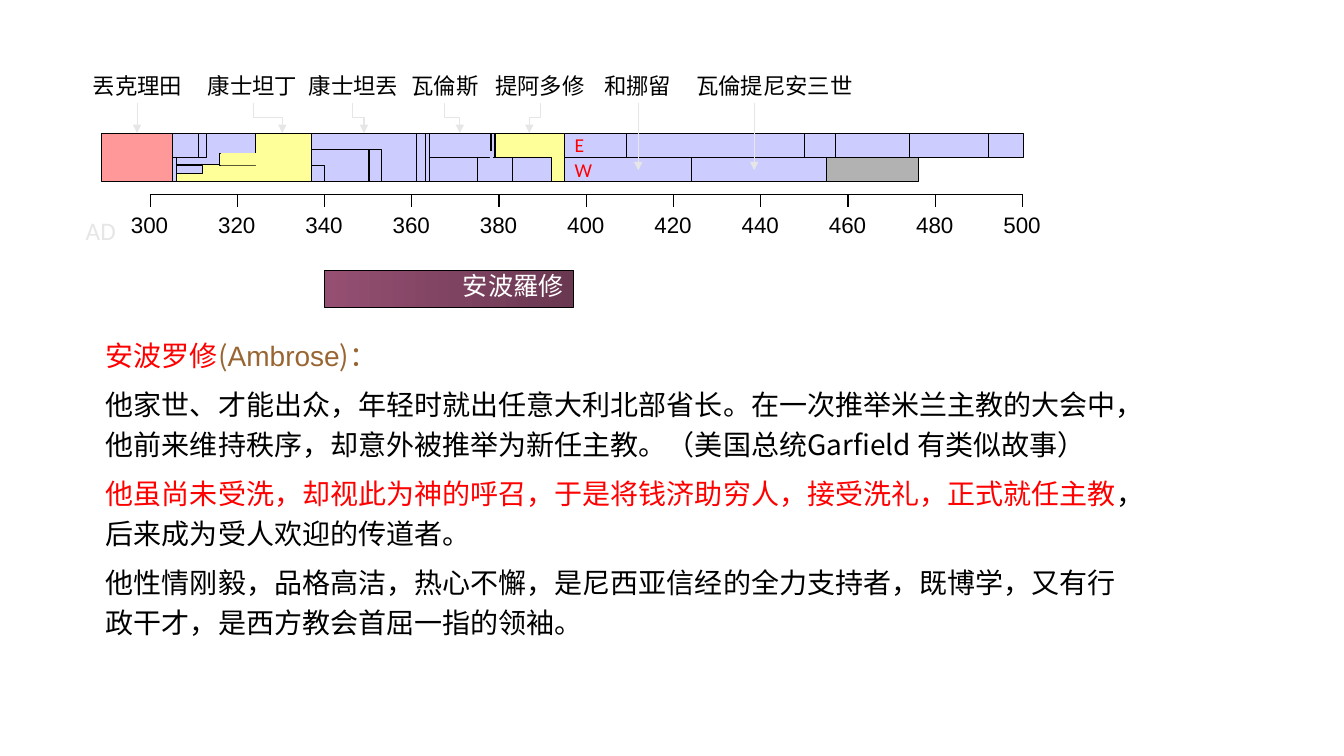
from dataclasses import dataclass

from lxml.etree import SubElement
from pptx import Presentation
from pptx.dml.color import RGBColor as Rgb
from pptx.enum.shapes import MSO_CONNECTOR as Link, MSO_SHAPE as Kind
from pptx.enum.text import MSO_ANCHOR as Anchor, MSO_AUTO_SIZE as Auto, PP_ALIGN as Align
from pptx.oxml.ns import qn
from pptx.util import Emu, Pt


@dataclass(frozen=True)
class Theme:
    black: str = "000000"
    white: str = "FFFFFF"
    red: str = "FF0000"
    brown: str = "996633"
    pale: str = "E7E6E6"
    lilac: str = "CCCCFF"
    pink: str = "FF9999"
    gold: str = "FFFF99"
    gray: str = "B2B2B2"
    plum: str = "954F72"
    sans: str = "Calibri"
    plain: str = "Arial"
    han: str = "Noto Sans CJK SC"
    mark: int = 14
    label: int = 16
    name: int = 18
    body: int = 20
    thin: float = 0.75


T = Theme()
SCALE = 9144
ZERO, YEAR = 149, 4.33
TOP, HALF, FULL = 132, 24, 48
LOW = TOP + HALF

REIGNS = [
    (305, 306, LOW, HALF, T.lilac),
    (289, 305, TOP, FULL, T.pink),
    (337, 361, TOP, FULL, T.lilac),
    (361, 363, TOP, FULL, T.lilac),
    (363, 364, TOP, FULL, T.lilac),
    (395, 424, LOW, HALF, T.lilac, "W"),
    (424, 455, LOW, HALF, T.lilac),
    (455, 476, LOW, HALF, T.gray),
    (306, 337, TOP, FULL, T.gold),
    (306, 312, 164, 8, T.lilac),
    (306, 324, TOP, 31, T.lilac),
    (311, 313, TOP, HALF, T.lilac),
    (305, 311, TOP, HALF, T.lilac),
    (395, 409, TOP, HALF, T.lilac, "E"),
    (409, 450, TOP, HALF, T.lilac),
    (450, 457, TOP, HALF, T.lilac),
    (457, 474, TOP, HALF, T.lilac),
    (474, 492, TOP, HALF, T.lilac),
    (492, 500, TOP, HALF, T.lilac),
    (316, 324, 152, 12, T.gold),
    (364, 378, TOP, HALF, T.lilac),
    (364, 375, LOW, HALF, T.lilac),
    (379, 395, TOP, FULL, T.gold),
    (375, 383, LOW, HALF, T.lilac),
    (378, 379, TOP, HALF, T.lilac),
    (383, 392, LOW, HALF, T.lilac),
    (337, 350, 148, 32, T.lilac),
    (350, 353, 148, 32, T.lilac),
    (337, 340, 164, 16, T.lilac),
]
PATCHES = [(219, 152, 35, 12, T.gold), (486, 150, 3, 8, T.lilac)]
RULERS = [
    ("丟克理田", 92, 89, 136, 136, TOP),
    ("康士坦丁", 206, 89, 251, 280, TOP),
    ("康士坦丟", 306, 89, 350, 361, TOP),
    ("瓦倫斯", 408, 67, 441, 456, TOP),
    ("提阿多修", 491, 89, 536, 525, TOP),
    ("和挪留", 599, 67, 633, 633, 169),
    ("瓦倫提尼安三世", 690, 156, 748, 748, 169),
]
STORY = [
    [("安波罗修", T.red, T.han), ("(", T.brown, T.han),
     ("Ambrose", T.brown, T.plain), (")：", T.brown, T.han)],
    [("他家世、才能出众，年轻时就出任意大利北部省长。在一次推举米兰主教的大会中，"
      "他前来维持秩序，却意外被推举为新任主教。（美国总统Garfield 有类似故事）", T.black, T.han)],
    [("他虽尚未受洗，却视此为神的呼召，于是将钱济助穷人，接受洗礼，正式就任主教", T.red, T.han),
     ("，后来成为受人欢迎的传道者。", T.black, T.han)],
    [("他性情刚毅，品格高洁，热心不懈，是尼西亚信经的全力支持者，既博学，又有行政干才，"
      "是西方教会首屈一指的领袖。", T.black, T.han)],
]


def px(*nums):
    return [Emu(round(n * SCALE)) for n in nums]


def at(year):
    return round(ZERO + (year - 300) * YEAR)


def style(font, color, face, size=None):
    font.color.rgb = Rgb.from_string(color)
    font.name = face
    if size:
        font.size = Pt(size)


def write(shape, text, size, color, align, anchor=Anchor.MIDDLE):
    frame = shape.text_frame
    frame.word_wrap = False
    frame.vertical_anchor = anchor
    para = frame.paragraphs[0]
    para.text = text
    para.alignment = align
    style(para.font, color, T.sans, size)
    return para


def bar(slide, x, y, w, h, color, edge=True):
    box = slide.shapes.add_shape(Kind.RECTANGLE, *px(x, y, w, h))
    box.shadow.inherit = False
    box.fill.solid()
    box.fill.fore_color.rgb = Rgb.from_string(color)
    if edge:
        box.line.color.rgb = Rgb.from_string(T.black)
        box.line.width = Pt(T.thin)
    else:
        box.line.fill.background()
    return box


def reign(slide, start, end, y, h, color, text=""):
    box = bar(slide, at(start), y, at(end) - at(start), h, color)
    if text:
        write(box, text, T.mark, T.red, Align.LEFT)


def label(slide, text, x, y, w, size, color):
    box = slide.shapes.add_textbox(*px(x, y, w, 35))
    frame = box.text_frame
    frame.margin_left = frame.margin_right = 0
    frame.margin_top, frame.margin_bottom = px(4, 4)
    write(box, text, size, color, Align.CENTER)


def arrow(slide, x1, y1, x2, y2):
    if x1 == x2:
        line = slide.shapes.add_connector(Link.STRAIGHT, *px(x1, y1, x2, y2))
    else:
        side = 1 if x2 > x1 else -1
        mid, row = (x1 + x2) / 2, (y1 + y2) / 2
        run, rise = side * (y2 - y1) / 2, abs(x2 - x1) / 2
        ends = px(mid + run, row - rise, mid - run, row + rise)
        line = slide.shapes.add_connector(Link.ELBOW, *ends)
        turn = 270 if side > 0 else 90
        line.element.spPr.find(qn("a:xfrm")).set("rot", str(turn * 60000))
    line.line.color.rgb = Rgb.from_string(T.pale)
    line.line.width = Pt(T.thin)
    SubElement(line.line._get_or_add_ln(), qn("a:tailEnd"), type="triangle")
    SubElement(line.element.spPr, qn("a:effectLst"))


def border(cell, color):
    props = cell._tc.get_or_add_tcPr()
    for side in ("lnL", "lnR", "lnT", "lnB"):
        edge = SubElement(props, qn("a:" + side), w=str(Pt(1)))
        fill = SubElement(edge, qn("a:solidFill"))
        SubElement(fill, qn("a:srgbClr"), val=color)


def grid(slide, x, y, w, h, count, color):
    table = slide.shapes.add_table(1, count, *px(x, y, w, h)).table
    table.first_row = table.horz_banding = False
    for cell in table.iter_cells():
        border(cell, color)
        cell.fill.background()
    return table


def scale(slide):
    grid(slide, ZERO, 193, 865, 40, 10, T.black)
    years = grid(slide, 105, 206, 952, 37, 11, T.white)
    for i, cell in enumerate(years.iter_cells()):
        cell.fill.solid()
        cell.fill.fore_color.rgb = Rgb.from_string(T.white)
        cell.vertical_anchor = Anchor.MIDDLE
        para = cell.text_frame.paragraphs[0]
        para.text = str(300 + 20 * i)
        para.alignment = Align.CENTER
        style(para.font, T.black, T.plain, T.label)
    label(slide, "AD", 85, 211, 30, T.name, T.pale)


def life(slide, text, start, end):
    box = bar(slide, at(start), 268, at(end) - at(start), 37, T.plum)
    box.fill.gradient()
    box.fill.gradient_angle = 0
    for stop in box.fill.gradient_stops:
        stop.color.rgb = Rgb.from_string(T.plum)
    dark = box.element.spPr.findall(".//" + qn("a:gs"))[-1][0]
    SubElement(dark, qn("a:shade"), val="46275")
    para = write(box, text, T.name, T.white, Align.RIGHT, Anchor.TOP)
    para.line_spacing = 0.85


def story(body, paras):
    body.left, body.top, body.width, body.height = px(95, 324, 1030, 324)
    frame = body.text_frame
    frame.word_wrap = True
    frame.auto_size = Auto.NONE
    for i, runs in enumerate(paras):
        para = frame.paragraphs[0] if i == 0 else frame.add_paragraph()
        props = para._p.get_or_add_pPr()
        props.set("marL", "0")
        props.set("indent", "0")
        SubElement(props, qn("a:buNone"))
        para.line_spacing = 1.2
        para.space_before = Pt(0)
        para.space_after = Pt(6)
        para.font.size = Pt(T.body)
        for text, color, face in runs:
            run = para.add_run()
            run.text = text
            style(run.font if len(runs) > 1 else para.font, color, face)


def main():
    deck = Presentation()
    deck.slide_width, deck.slide_height = px(1333, 750)
    slide = deck.slides.add_slide(deck.slide_layouts[1])
    title = slide.shapes.title.element
    title.getparent().remove(title)
    scale(slide)
    for item in REIGNS:
        reign(slide, *item)
    for patch in PATCHES:
        bar(slide, *patch, edge=False)
    for text, x, w, start, end, tip in RULERS:
        label(slide, text, x, 67, w, T.label, T.black)
        arrow(slide, start, 102, end, tip)
    life(slide, "安波羅修", 340, 397)
    story(slide.placeholders[1], STORY)
    deck.save("out.pptx")


if __name__ == "__main__":
    main()
